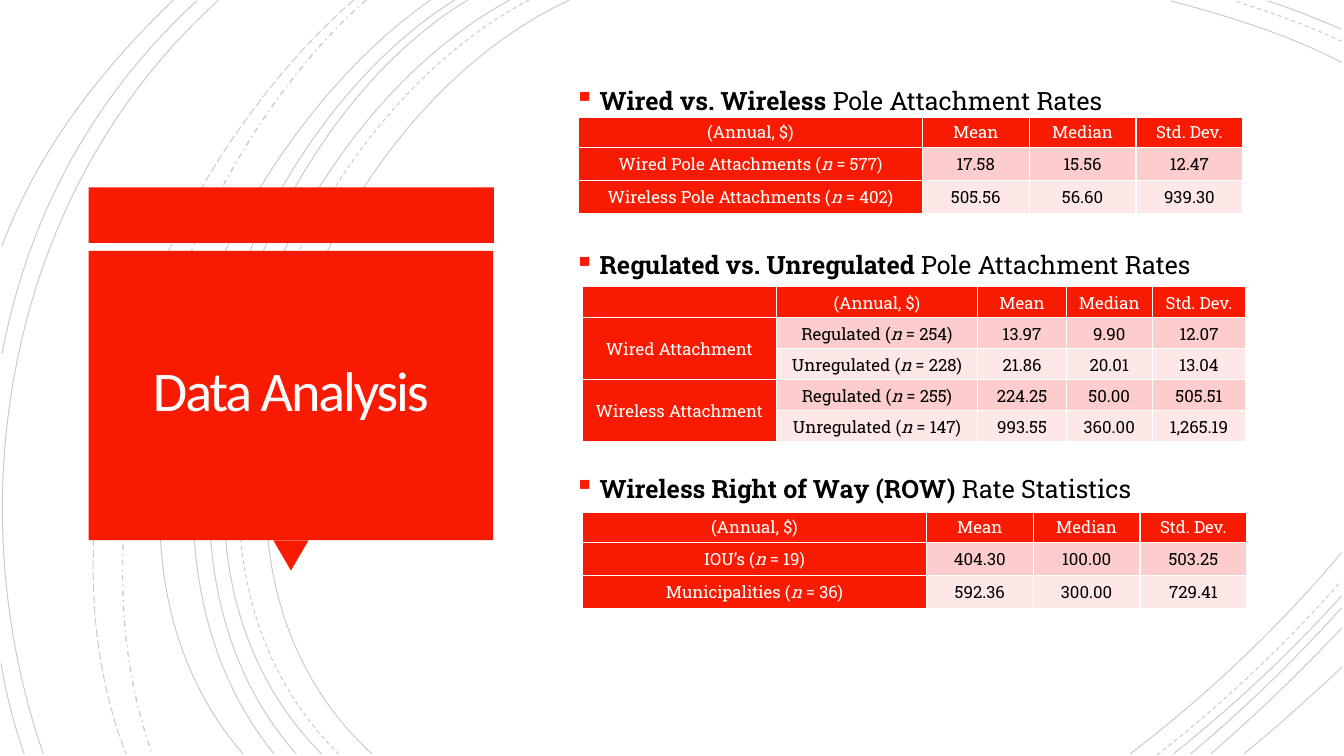
from dataclasses import dataclass

from lxml import etree
from pptx import Presentation
from pptx import util as u
from pptx.dml.color import RGBColor
from pptx.enum import dml, shapes, text
from pptx.oxml.ns import qn

RED, WHITE, BLACK = "F81B02", "FFFFFF", "000000"
BANDS = ("FCCDCC", "FEE8E7")
BODY_FONT = "Roboto Slab"
SLIDE_WIDTH, SLIDE_HEIGHT = u.Inches(13.33), u.Inches(7.5)
DASH = dml.MSO_LINE.DASH


def across(percent: float) -> int:
    return round(SLIDE_WIDTH * percent / 100)


def down(percent: float) -> int:
    return round(SLIDE_HEIGHT * percent / 100)


@dataclass(frozen=True)
class Box:
    """A rectangle in percent of the slide's width and height."""
    left: float
    top: float
    width: float
    height: float

    def emu(self) -> tuple[int, int, int, int]:
        return across(self.left), down(self.top), across(self.width), down(self.height)


@dataclass(frozen=True)
class Arc:
    """Start, two handles and end of a Bézier curve, in percent of the slide."""
    points: tuple[tuple[float, float], ...]
    dash: dml.MSO_LINE = dml.MSO_LINE.SOLID
    weight: float = 0.75


@dataclass(frozen=True)
class RateTable:
    """A headed table; an empty row label continues the label above it."""
    heading: str
    heading_top: float
    left: float
    top: float
    columns: tuple[float, ...]
    row_heights: tuple[float, ...]
    rows: tuple[tuple[str, ...], ...]
    line_spacing: float = 1.0


ARCS = (
    Arc(((42.38, 0), (23.63, 15.33), (10.73, 72), (27.68, 99.73))),
    Arc(((99.83, 8.27), (95.85, 4.53), (91.35, 2.13), (87.15, 0.13))),
    Arc(((84.08, 99.73), (89.78, 92), (95.18, 82.93), (99.83, 73.07))),
    Arc(((39.38, 0), (21.38, 16.67), (9.23, 71.6), (25.2, 99.73)), DASH),
    Arc(((99.83, 5.47), (97.28, 3.33), (94.5, 1.6), (91.88, 0.13)), DASH),
    Arc(((86.1, 99.87), (90.98, 93.07), (95.63, 85.33), (99.75, 76.93)), DASH),
    Arc(((37.95, 0), (20.25, 16.93), (8.25, 71.6), (23.93, 99.73))),
    Arc(((99.83, 3.87), (98.03, 2.53), (96.23, 1.2), (94.35, 0.13))),
    Arc(((87.3, 99.73), (91.73, 93.47), (96, 86.4), (99.83, 78.8))),
    Arc(((34.8, 0), (18.3, 17.73), (8.25, 72.13), (22.05, 99.73))),
    Arc(((88.58, 99.73), (92.55, 93.87), (96.3, 87.33), (99.83, 80.4))),
    Arc(((33.83, 0), (17.33, 18.4), (7.28, 71.07), (20.4, 99.73))),
    Arc(((90.08, 99.73), (93.45, 94.53), (96.75, 88.93), (99.83, 83.07))),
    Arc(((32.03, 0), (16.28, 19.6), (3.98, 70.53), (18.08, 99.73))),
    Arc(((92.55, 99.73), (95.03, 96.13), (97.43, 92.27), (99.83, 88.27))),
    Arc(((27.23, 0), (13.2, 22.13), (4.88, 67.87), (11.33, 99.73)), dml.MSO_LINE.DASH_DOT, 1),
    Arc(((26.33, 0), (11.78, 22.53), (2.18, 66.53), (9.38, 99.73)), dml.MSO_LINE.LONG_DASH),
    Arc(((16.28, 0), (0.83, 24.67), (-3.45, 65.33), (3.23, 99.73))),
    Arc(((14.63, 0.13), (6.9, 12.8), (2.1, 28.53), (0.15, 46.8))),
    Arc(((0.08, 87.73), (0.45, 91.87), (1.05, 95.87), (1.8, 99.73))),
    Arc(((12.9, 0), (7.5, 9.2), (2.78, 20), (0.15, 32.53))),
)

STATISTICS = ("Mean", "Median", "Std. Dev.")
WIDE_LABEL = (25.58, 7.95, 7.95, 7.95)
THREE_ROWS = (4, 4.4, 4.4)
RATE_TABLES = (
    RateTable("*Wired vs. Wireless *Pole Attachment Rates", 9.2, 43.05, 15.47, WIDE_LABEL, THREE_ROWS, (
        ("(Annual, $)", *STATISTICS),
        ("Wired Pole Attachments (*n* = 577)", "17.58", "15.56", "12.47"),
        ("Wireless Pole Attachments (*n* = 402)", "505.56", "56.60", "939.30"),
    )),
    RateTable("*Regulated vs. Unregulated *Pole Attachment Rates", 30.93, 43.35, 37.87,
              (14.4, 15, 6.6, 6.38, 6.98), (4.11,) * 5, (
        ("", "(Annual, $)", *STATISTICS),
        ("Wired Attachment", "Regulated (*n* = 254)", "13.97", "9.90", "12.07"),
        ("", "Unregulated (*n* = 228)", "21.86", "20.01", "13.04"),
        ("Wireless Attachment", "Regulated (*n* = 255)", "224.25", "50.00", "505.51"),
        ("", "Unregulated (*n* = 147)", "993.55", "360.00", "1,265.19"),
    ), 1.07),
    RateTable("*Wireless Right of Way (ROW) *Rate Statistics", 60.53, 43.35, 67.73, WIDE_LABEL, THREE_ROWS, (
        ("(Annual, $)", *STATISTICS),
        ("IOU’s (*n* = 19)", "404.30", "100.00", "503.25"),
        ("Municipalities (*n* = 36)", "592.36", "300.00", "729.41"),
    )),
)


def paint(fill_or_font, color: str) -> None:
    """Give a fill or a font one solid colour."""
    fill = getattr(fill_or_font, "fill", fill_or_font)
    fill.solid()
    fill.fore_color.rgb = RGBColor.from_string(color)


def write(paragraph, marked: str, size: float, color: str, font: str = BODY_FONT, emphasis: str = "italic") -> None:
    """Write text in which asterisks enclose emphasised parts."""
    paragraph.font.size, paragraph.font.name = u.Pt(size), font
    paint(paragraph.font, color)
    for index, part in enumerate(marked.split("*")):
        if part:
            run = paragraph.add_run()
            run.text = part
            if index % 2:
                setattr(run.font, emphasis, True)


def draw_arc(slide, arc: Arc) -> None:
    start, *rest = [(across(x), down(y)) for x, y in arc.points]
    builder = slide.shapes.build_freeform(*start)
    builder.add_line_segments(rest, close=False)
    curve = builder.convert_to_shape()
    curve.shadow.inherit = False
    curve.fill.background()
    paint(curve.line, BLACK)
    curve.line.width, curve.line.dash_style = u.Pt(arc.weight), arc.dash
    ink = curve.line.fill.fore_color._xFill.find(qn("a:srgbClr"))
    etree.SubElement(ink, qn("a:alpha"), val="20000")
    outline = curve.element.find(".//" + qn("a:path"))
    bezier = etree.SubElement(outline, qn("a:cubicBezTo"))
    for segment in outline.findall(qn("a:lnTo")):
        bezier.append(segment[0])
        outline.remove(segment)


def draw_red(slide, kind: shapes.MSO_SHAPE, box: Box, rotation: float = 0) -> None:
    block = slide.shapes.add_shape(kind, *box.emu())
    block.shadow.inherit = False
    block.rotation = rotation
    paint(block.fill, RED)
    block.line.fill.background()


def add_frame(slide, box: Box):
    frame = slide.shapes.add_textbox(*box.emu()).text_frame
    frame.word_wrap = True
    frame.vertical_anchor = text.MSO_ANCHOR.MIDDLE
    return frame


def draw_title(slide) -> None:
    frame = add_frame(slide, Box(7.28, 34.27, 28.73, 35.87))
    frame.margin_left = frame.margin_right = across(1.88)
    frame.margin_top = frame.margin_bottom = down(3.33)
    title = frame.paragraphs[0]
    title.alignment, title.line_spacing = text.PP_ALIGN.CENTER, 0.85
    write(title, "Data Analysis", 40, "FFFEFF", "Calibri")
    title.runs[0]._r.get_or_add_rPr().set("spc", "-150")


def draw_heading(slide, marked: str, top: float) -> None:
    heading = add_frame(slide, Box(42, top, 51.53, 7.33)).paragraphs[0]
    heading.line_spacing, heading.space_before = 1.2, u.Pt(10)
    properties = heading._p.get_or_add_pPr()
    indent = across(1.88)
    properties.set("marL", str(indent))
    properties.set("indent", str(-indent))
    bullet_color = etree.SubElement(properties, qn("a:buClr"))
    etree.SubElement(bullet_color, qn("a:srgbClr"), val=RED)
    etree.SubElement(properties, qn("a:buSzPct"), val="110000")
    etree.SubElement(properties, qn("a:buChar"), char="▪")
    write(heading, marked, 18, BLACK, emphasis="bold")


def style_cell(cell, fill: str) -> None:
    cell.margin_left = cell.margin_right = across(0.53)
    cell.margin_top = cell.margin_bottom = 0
    cell.vertical_anchor = text.MSO_ANCHOR.MIDDLE
    for side in ("lnL", "lnR", "lnT", "lnB"):
        border = etree.SubElement(cell._tc.get_or_add_tcPr(), qn("a:" + side), w=str(u.Pt(1)))
        border_fill = etree.SubElement(border, qn("a:solidFill"))
        etree.SubElement(border_fill, qn("a:srgbClr"), val=WHITE)
    paint(cell.fill, fill)


def draw_rates(slide, rates: RateTable) -> None:
    draw_heading(slide, rates.heading, rates.heading_top)
    box = Box(rates.left, rates.top, sum(rates.columns), sum(rates.row_heights))
    grid = slide.shapes.add_table(len(rates.rows), len(rates.columns), *box.emu()).table
    grid.first_row = grid.horz_banding = False
    for column, width in zip(grid.columns, rates.columns):
        column.width = across(width)
    for r, values in enumerate(rates.rows):
        grid.rows[r].height = down(rates.row_heights[r])
        for c, value in enumerate(values):
            is_label = r == 0 or c == 0
            cell = grid.cell(r, c)
            style_cell(cell, RED if is_label else BANDS[(r - 1) % 2])
            paragraph = cell.text_frame.paragraphs[0]
            paragraph.alignment, paragraph.line_spacing = text.PP_ALIGN.CENTER, rates.line_spacing
            write(paragraph, value, 12, WHITE if is_label else BLACK)
        if r and not values[0]:
            grid.cell(r - 1, 0).merge(grid.cell(r, 0))


def main() -> None:
    deck = Presentation()
    deck.slide_width, deck.slide_height = SLIDE_WIDTH, SLIDE_HEIGHT
    slide = deck.slides.add_slide(deck.slide_layouts[6])
    for arc in ARCS:
        draw_arc(slide, arc)
    draw_red(slide, shapes.MSO_SHAPE.RECTANGLE, Box(6.6, 24.8, 30.15, 7.33))
    draw_red(slide, shapes.MSO_SHAPE.ISOSCELES_TRIANGLE, Box(20.33, 71.47, 2.63, 4), 180)
    draw_red(slide, shapes.MSO_SHAPE.RECTANGLE, Box(6.6, 33.2, 30.1, 38.27))
    draw_title(slide)
    for rates in RATE_TABLES:
        draw_rates(slide, rates)
    deck.save("out.pptx")


if __name__ == "__main__":
    main()
